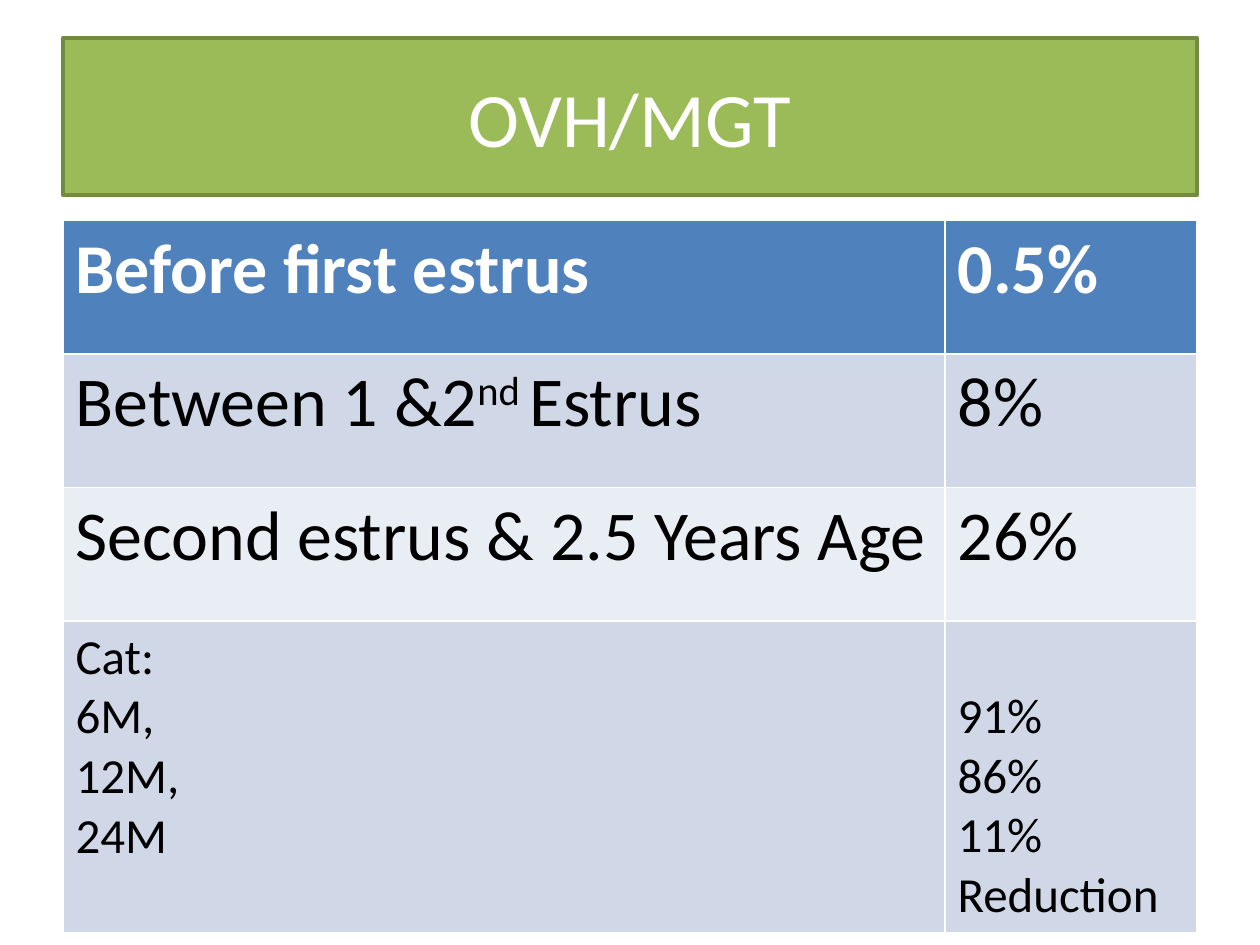
import pptx
import pptx.dml.color
import pptx.enum.text
import pptx.util
from pptx.util import Inches

COLORS = {
    "banner": "9BBB59",
    "banner_line": "738A42",
    "header": "4F81BD",
    "band_dark": "D0D8E8",
    "band_light": "E9EDF4",
    "white": "FFFFFF",
    "black": "000000",
}
FONT = "Calibri"
ROWS = [
    ([[("Before first estrus", 0)]], [[("0.5%", 0)]]),
    ([[("Between 1 &2", 0), ("nd ", 30000), ("Estrus", 0)]], [[("8%", 0)]]),
    ([[("Second estrus & 2.5 Years Age", 0)]], [[("26%", 0)]]),
    (
        [[(line, 0)] for line in ("Cat:", "6M,", "12M,", "24M")],
        [[(line, 0)] for line in ("91%", "86%", "11%", "Reduction")],
    ),
]
ROW_FILLS = ["header", "band_dark", "band_light", "band_dark"]
ROW_HEIGHTS = [1.06, 1.06, 1.06, 2.47]
ROW_SIZES = [40, 40, 40, 28]
COLUMN_WIDTHS = [7, 2]


def rgb(name):
    return pptx.dml.color.RGBColor.from_string(COLORS[name])


def format_run(run, size, color, bold=False):
    run.font.name = FONT
    run.font.size = pptx.util.Pt(size)
    run.font.bold = bold
    run.font.color.rgb = rgb(color)


def place_title(slide, left, top, width, height):
    banner = slide.shapes.title
    banner.left, banner.top = left, top
    banner.width, banner.height = width, height
    banner.fill.solid()
    banner.fill.fore_color.rgb = rgb("banner")
    banner.line.color.rgb = rgb("banner_line")
    banner.line.width = pptx.util.Pt(2)
    banner.text_frame.text = "OVH/MGT"
    banner.text_frame.vertical_anchor = pptx.enum.text.MSO_ANCHOR.MIDDLE
    heading = banner.text_frame.paragraphs[0]
    heading.alignment = pptx.enum.text.PP_ALIGN.CENTER
    format_run(heading.runs[0], 44, "white")


def fill_cell(cell, lines, fill, size):
    cell.fill.solid()
    cell.fill.fore_color.rgb = rgb(fill)
    is_header = fill == "header"
    frame = cell.text_frame
    for index, pieces in enumerate(lines):
        paragraph = frame.add_paragraph() if index else frame.paragraphs[0]
        for text, baseline in pieces:
            run = paragraph.add_run()
            run.text = text
            format_run(run, size, "white" if is_header else "black", is_header)
            if baseline:
                run._r.get_or_add_rPr().set("baseline", str(baseline))


def place_risk_table(slide, left, top, width, height):
    risks = slide.shapes.add_table(
        len(ROWS), len(COLUMN_WIDTHS), left, top, width, height
    ).table
    for column, column_width in zip(risks.columns, COLUMN_WIDTHS):
        column.width = Inches(column_width)
    for r, contents in enumerate(ROWS):
        risks.rows[r].height = Inches(ROW_HEIGHTS[r])
        for c, lines in enumerate(contents):
            fill_cell(risks.cell(r, c), lines, ROW_FILLS[r], ROW_SIZES[r])
    risks.cell(3, 1).margin_top = Inches(0.52)


def main():
    deck = pptx.Presentation()
    deck.slide_width, deck.slide_height = Inches(10), Inches(7.5)
    slide = deck.slides.add_slide(deck.slide_layouts[5])
    place_title(slide, Inches(0.5), Inches(0.3), Inches(9), Inches(1.25))
    place_risk_table(
        slide, Inches(0.5), Inches(1.75), Inches(9), Inches(sum(ROW_HEIGHTS))
    )
    deck.save("out.pptx")


if __name__ == "__main__":
    main()
